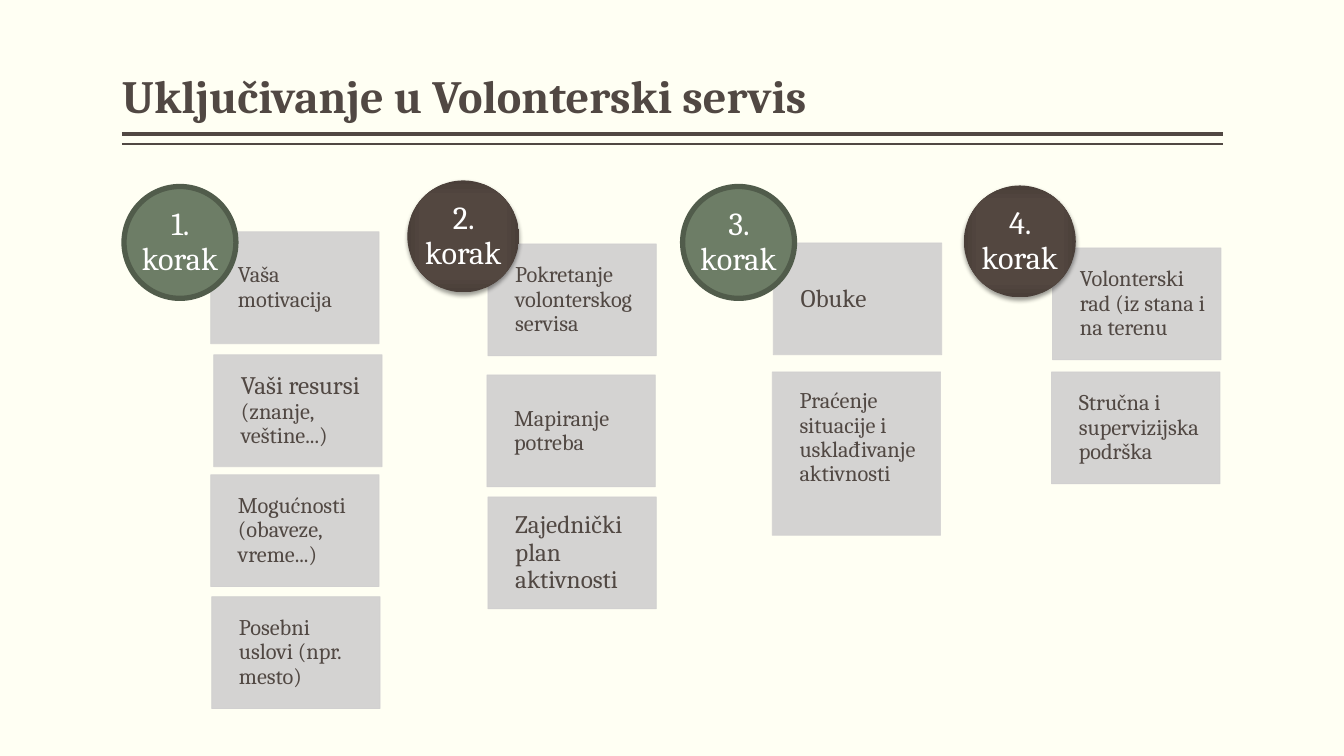
from lxml.etree import SubElement
from pptx import Presentation
from pptx.dml.color import RGBColor
from pptx.enum.shapes import MSO_CONNECTOR, MSO_SHAPE
from pptx.enum.text import MSO_ANCHOR, MSO_AUTO_SIZE, PP_ALIGN
from pptx.oxml import parse_xml
from pptx.oxml.ns import nsdecls, qn
from pptx.util import Inches, Pt

FONT = "Cambria"
INK = "514843"
CARD = "D0CFCF"
CARD_W, CARD_H, CIRCLE = 1.67, 1.11, 1.11

STEPS = [
    ("1. korak", 1.23, 1.85, "green", [
        (2.09, 2.3, [("Vaša motivacija", 16)]),
        (2.12, 3.52, [("Vaši resursi ", 18), ("(znanje, veštine...)", 16)]),
        (2.09, 4.71, [("Mogućnosti (obaveze, vreme...)", 16)]),
        (2.1, 5.92, [("Posebni uslovi (npr. mesto)", 16)]),
    ]),
    ("2. korak", 4.04, 1.79, "brown", [
        (4.84, 2.42, [("Pokretanje volonterskog servisa", 16)]),
        (4.83, 3.72, [("Mapiranje potreba", 16)]),
        (4.84, 4.93, [("Zajednički plan aktivnosti", 18)]),
    ]),
    ("3. korak", 6.77, 1.85, "green", [
        (7.67, 2.41, [("Obuke", 18)]),
        (7.66, 3.69, [("Praćenje situacije i usklađivanje aktivnosti", 16)], 1.62, 0.43),
    ]),
    ("4. korak", 9.56, 1.84, "brown", [
        (10.44, 2.46, [("Volonterski rad (iz stana i na terenu", 16)]),
        (10.43, 3.69, [("Stručna i supervizijska podrška", 16)]),
    ]),
]


def rgb(value):
    return RGBColor.from_string(value)


def set_text(sp, runs, color, insets, anchor=MSO_ANCHOR.MIDDLE, align=PP_ALIGN.LEFT, bold=False):
    tf = sp.text_frame
    tf.word_wrap = True
    tf.auto_size = MSO_AUTO_SIZE.NONE
    tf.vertical_anchor = anchor
    tf.margin_left, tf.margin_top, tf.margin_right, tf.margin_bottom = map(Inches, insets)
    p = tf.paragraphs[0]
    p.alignment = align
    p.line_spacing = 0.9
    for text, size in runs:
        r = p.add_run()
        r.text = text
        r.font.name = FONT
        r.font.size = Pt(size)
        r.font.bold = bold
        r.font.color.rgb = rgb(color)


def add_shape(s, kind, x, y, w, h):
    sp = s.shapes.add_shape(kind, Inches(x), Inches(y), Inches(w), Inches(h))
    sp.shadow.inherit = False
    return sp


def set_alpha(sp, percent):
    for color in sp._element.spPr.iter(qn("a:srgbClr")):
        SubElement(color, qn("a:alpha")).set("val", str(percent * 1000))


def add_card(s, x, y, runs, h=CARD_H, bottom=None):
    sp = add_shape(s, MSO_SHAPE.RECTANGLE, x, y, CARD_W, h)
    sp.fill.solid()
    sp.fill.fore_color.rgb = rgb(CARD)
    sp.line.color.rgb = rgb(CARD)
    sp.line.width = Pt(0.5)
    set_alpha(sp, 90)
    inset = 0.14 if runs[0][1] == 18 else 0.12
    set_text(sp, runs, INK, (0.27, inset, inset, bottom or inset))


def style_green(sp):
    sp.fill.solid()
    sp.fill.fore_color.rgb = rgb("6D7D66")
    sp.line.color.rgb = rgb("515C4B")
    sp.line.width = Pt(3.78)


def style_brown(sp):
    sp.line.fill.background()
    sp.fill.background()
    spPr = sp._element.spPr
    stops = "".join(
        f'<a:gs pos="{pos * 1000}"><a:srgbClr val="{color}"/></a:gs>'
        for pos, color in [(0, "544740"), (71, "534740"), (100, "4A3F39")])
    spPr.replace(spPr.find(qn("a:noFill")), parse_xml(
        f'<a:gradFill {nsdecls("a")} rotWithShape="1"><a:gsLst>{stops}</a:gsLst><a:path path="rect">'
        '<a:fillToRect l="50000" t="50000" r="50000" b="50000"/></a:path></a:gradFill>'))
    spPr.find(qn("a:effectLst")).append(parse_xml(
        f'<a:outerShdw {nsdecls("a")} blurRad="{Pt(3.1)}" dist="{Pt(2)}" dir="5400000" rotWithShape="0">'
        '<a:srgbClr val="000000"><a:alpha val="38000"/></a:srgbClr></a:outerShdw>'))


def add_circle(s, label, x, y, style):
    sp = add_shape(s, MSO_SHAPE.OVAL, x, y, CIRCLE, CIRCLE)
    {"green": style_green, "brown": style_brown}[style](sp)
    set_text(sp, [(label, 23)], "FFFFFF", (0, 0, 0, 0), align=PP_ALIGN.CENTER)


def add_rule(s, y, width):
    line = s.shapes.add_connector(
        MSO_CONNECTOR.STRAIGHT, Inches(1.21), Inches(y), Inches(12.13), Inches(y))
    line.line.color.rgb = rgb(INK)
    line.line.width = Pt(width)
    SubElement(line._element.spPr, qn("a:effectLst"))


def add_title(s, text):
    title = s.shapes.title
    title.left, title.top, title.width, title.height = map(Inches, (1.21, 0.08, 10.92, 1.2))
    set_text(title, [(text, 33)], INK, (0, 0.05, 0, 0.05), anchor=MSO_ANCHOR.BOTTOM, bold=True)


def main():
    prs = Presentation()
    prs.slide_width, prs.slide_height = Inches(13.33), Inches(7.5)
    s = prs.slides.add_slide(prs.slide_layouts[5])
    s.background.fill.solid()
    s.background.fill.fore_color.rgb = rgb("FFFFF3")
    add_rule(s, 1.33, 3)
    add_rule(s, 1.43, 1)
    add_title(s, "Uključivanje u Volonterski servis")
    for label, x, y, style, cards in STEPS:
        for card in cards:
            add_card(s, *card)
        add_circle(s, label, x, y, style)
    prs.save("out.pptx")


if __name__ == "__main__":
    main()
